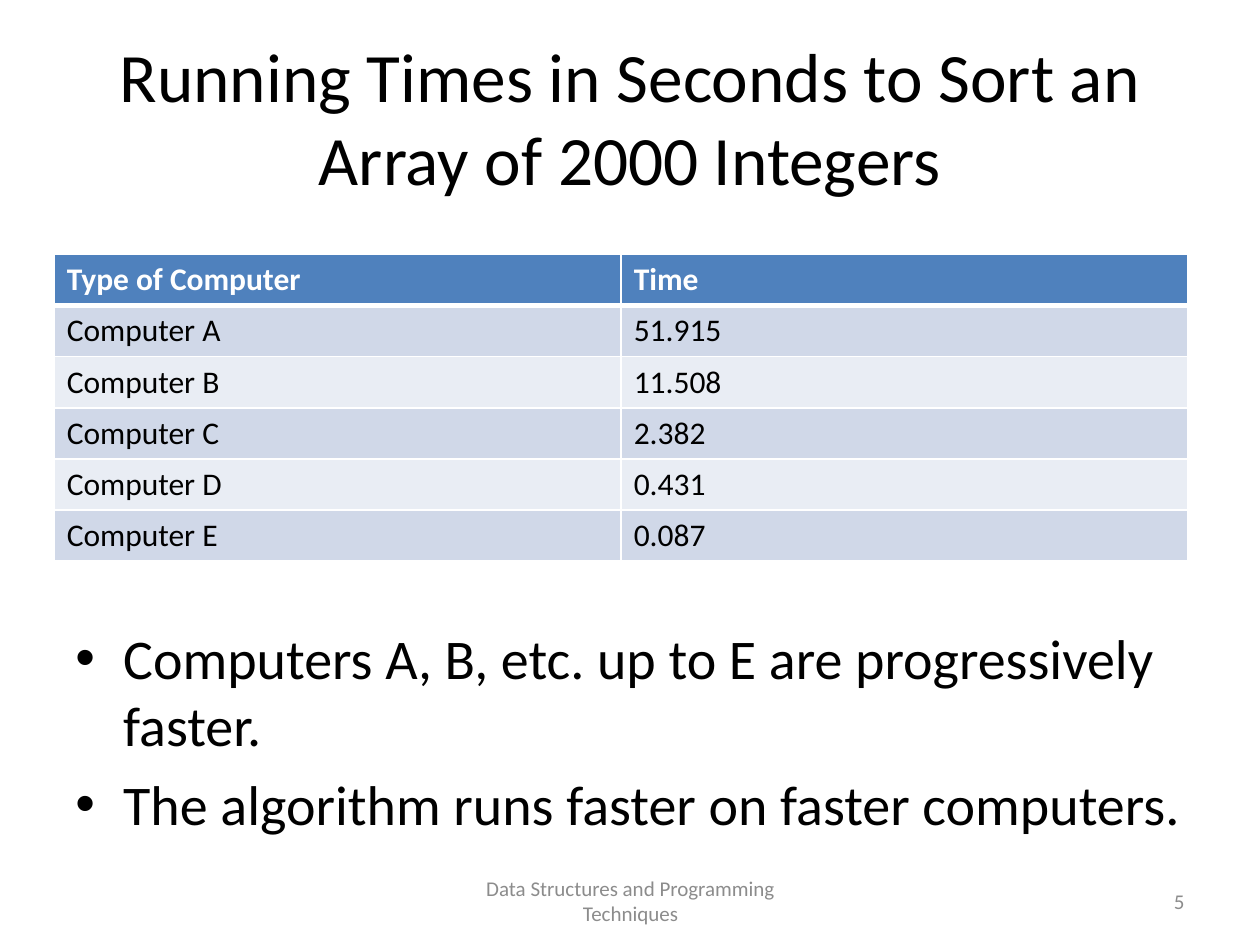
from lxml.etree import SubElement
from pptx import Presentation
from pptx.dml.color import RGBColor
from pptx.enum.text import MSO_ANCHOR, MSO_AUTO_SIZE, PP_ALIGN
from pptx.oxml.ns import qn
from pptx.util import Inches, Pt

COLORS = {"text": "000000", "white": "FFFFFF", "header": "4F81BD",
          "band_dark": "D0D8E8", "band_light": "E9EDF4", "footer": "8C8C8C"}

TITLE = "Running Times in Seconds to Sort an Array of 2000 Integers"
ROWS = [("Type of Computer", "Time"),
        ("Computer A", "51.915"),
        ("Computer B", "11.508"),
        ("Computer C", "2.382"),
        ("Computer D", "0.431"),
        ("Computer E", "0.087")]
BULLETS = ["Computers A, B, etc. up to E are progressively faster.",
           "The algorithm runs faster on faster computers."]


def rgb(name):
    return RGBColor.from_string(COLORS[name])


def write(p, text, size, color="text", **formats):
    r = p.add_run()
    r.text = text
    r.font.color.rgb = rgb(color)
    for key, value in {"name": "Calibri", "size": Pt(size), **formats}.items():
        setattr(r.font, key, value)


def set_frame(tf, anchor):
    formats = {"word_wrap": True, "auto_size": MSO_AUTO_SIZE.NONE,
               "vertical_anchor": anchor}
    for key, value in formats.items():
        setattr(tf, key, value)


def add_title(s, box):
    sp = s.shapes.title
    for key, value in zip(("left", "top", "width", "height"), box):
        setattr(sp, key, Inches(value))
    set_frame(sp.text_frame, MSO_ANCHOR.MIDDLE)
    p = sp.text_frame.paragraphs[0]
    p.alignment = PP_ALIGN.CENTER
    write(p, TITLE, 39.6)


def set_borders(cell, widths):
    tc_pr = cell._tc.get_or_add_tcPr()
    for i, (side, width) in enumerate(widths.items()):
        ln = tc_pr.makeelement(qn(f"a:ln{side}"), {"w": str(Pt(width))})
        fill = SubElement(ln, qn("a:solidFill"))
        SubElement(fill, qn("a:srgbClr"), val=COLORS["white"])
        tc_pr.insert(i, ln)  # borders come before the fill


def add_times_table(s, box):
    left, top, width, height = map(Inches, box)
    table = s.shapes.add_table(len(ROWS), len(ROWS[0]),
                               left, top, width, height).table
    for i, values in enumerate(ROWS):
        header = i == 0
        band = "header" if header else "band_dark" if i % 2 else "band_light"
        widths = {"L": 1, "R": 1, "T": 3 if i == 1 else 1, "B": 3 if header else 1}
        for j, value in enumerate(values):
            cell = table.cell(i, j)
            cell.fill.solid()
            cell.fill.fore_color.rgb = rgb(band)
            set_borders(cell, widths)
            write(cell.text_frame.paragraphs[0], value, 18,
                  "white" if header else "text", bold=header)


def add_bullets(s, box):
    tf = s.shapes.add_textbox(*map(Inches, box)).text_frame
    set_frame(tf, MSO_ANCHOR.TOP)
    for i, text in enumerate(BULLETS):
        p = tf.paragraphs[0] if i == 0 else tf.add_paragraph()
        p.space_after = Pt(6.4)
        p_pr = p._p.get_or_add_pPr()
        p_pr.set("marL", str(Inches(0.38)))
        p_pr.set("indent", str(-Inches(0.38)))
        SubElement(p_pr, qn("a:buFont"), typeface="Arial")
        SubElement(p_pr, qn("a:buChar"), char="•")
        write(p, text, 32)


def add_footer(s, box, text, alignment):
    tf = s.shapes.add_textbox(*map(Inches, box)).text_frame
    set_frame(tf, MSO_ANCHOR.MIDDLE)
    p = tf.paragraphs[0]
    p.alignment = alignment
    write(p, text, 12, "footer")


def main():
    prs = Presentation()
    prs.slide_width, prs.slide_height = Inches(10), Inches(7.5)
    s = prs.slides.add_slide(prs.slide_layouts[5])

    # Title, table and conclusions
    add_title(s, (0.5, 0.3, 9, 1.25))
    add_times_table(s, (0.43, 2.02, 9, 2.43))
    add_bullets(s, (0.5, 4.9, 9, 1.8))

    # Course name and slide number
    add_footer(s, (3.42, 6.95, 3.17, 0.4),
               "Data Structures and Programming Techniques", PP_ALIGN.CENTER)
    add_footer(s, (7.17, 6.95, 2.33, 0.4), "5", PP_ALIGN.RIGHT)

    prs.save("out.pptx")


if __name__ == "__main__":
    main()
